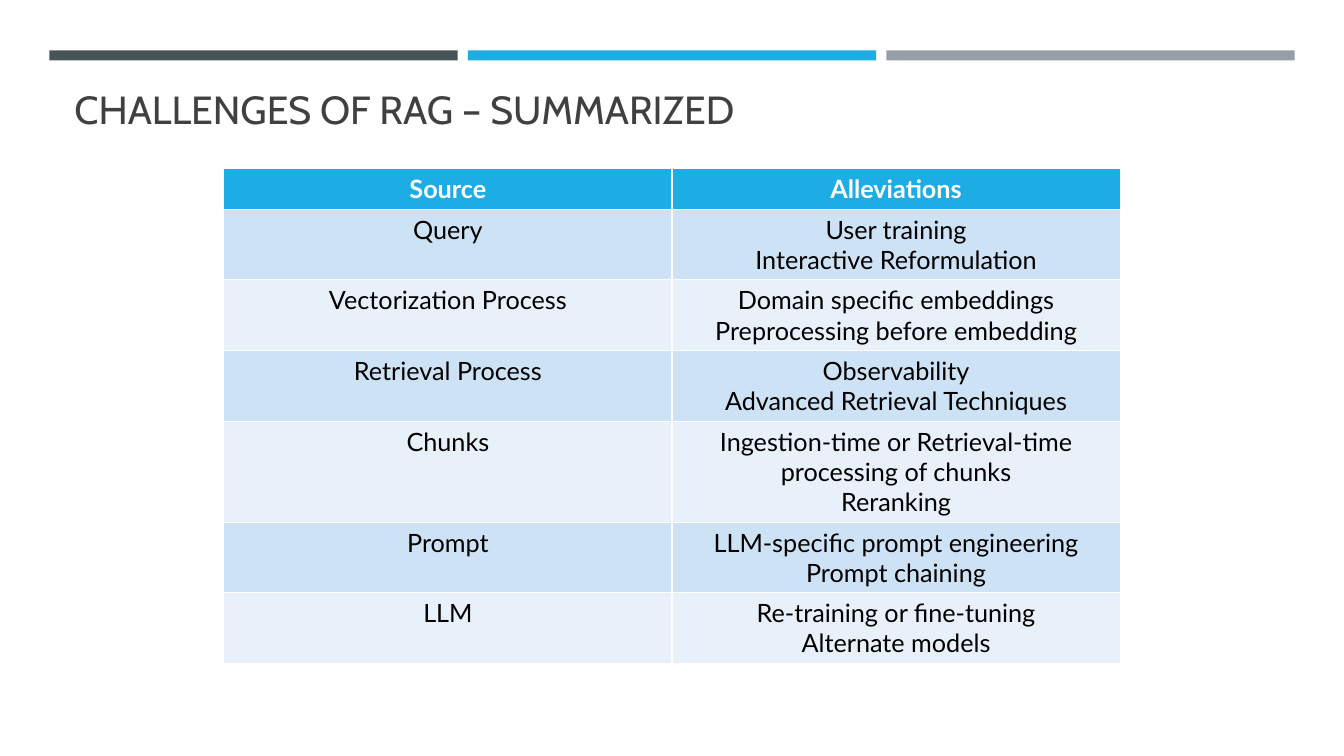
from pptx import Presentation
from pptx.dml.color import RGBColor
from pptx.enum.shapes import MSO_SHAPE as Shape
from pptx.enum.text import MSO_ANCHOR as Anchor, PP_ALIGN as Align
from pptx.util import Inches, Pt

SLATE = RGBColor(0x46, 0x53, 0x59)
BLUE = RGBColor(0x1C, 0xAD, 0xE4)
GRAY = RGBColor(0x96, 0x9F, 0xA7)
CHARCOAL = RGBColor(0x40, 0x40, 0x40)
BLACK = RGBColor(0, 0, 0)
WHITE = RGBColor(0xFF, 0xFF, 0xFF)
BANDS = (RGBColor(0xCD, 0xE3, 0xF5), RGBColor(0xE8, 0xF1, 0xFA))

HEADINGS = ("Source", "Alleviations")
# Source, its alleviations, and the number of lines they fill
CHALLENGES = [
    ("Query", "User training\nInteractive Reformulation", 2),
    ("Vectorization Process",
     "Domain specific embeddings\nPreprocessing before embedding", 2),
    ("Retrieval Process", "Observability\nAdvanced Retrieval Techniques", 2),
    ("Chunks",
     "Ingestion-time or Retrieval-time processing of chunks\nReranking", 3),
    ("Prompt", "LLM-specific prompt engineering\nPrompt chaining", 2),
    ("LLM", "Re-training or fine-tuning\nAlternate models", 2),
]


def add_top_bars(slide, left, top, width, height, gap=0.1):
    colors = (SLATE, BLUE, GRAY)
    bar_width = (width - gap * (len(colors) - 1)) / len(colors)
    for index, color in enumerate(colors):
        bar = slide.shapes.add_shape(
            Shape.RECTANGLE, Inches(left + index * (bar_width + gap)),
            Inches(top), Inches(bar_width), Inches(height))
        bar.shadow.inherit = False
        bar.fill.solid()
        bar.fill.fore_color.rgb = color
        bar.line.fill.background()


def add_title(slide, left, top, width, height):
    title = slide.shapes.add_textbox(
        Inches(left), Inches(top), Inches(width), Inches(height)).text_frame
    title.word_wrap = True
    title.vertical_anchor = Anchor.BOTTOM
    heading = title.paragraphs[0]
    heading.text = "CHALLENGES OF RAG – SUMMARIZED"
    heading.font.name = "Cabin"
    heading.font.size = Pt(28)
    heading.font.color.rgb = CHARCOAL


def fill_cell(cell, text, fill, color, bold):
    cell.text = text
    cell.fill.solid()
    cell.fill.fore_color.rgb = fill
    for line in cell.text_frame.paragraphs:
        line.alignment = Align.CENTER
        line.font.name = "Lato"
        line.font.size = Pt(18)
        line.font.bold = bold
        line.font.color.rgb = color


def add_challenge_table(slide, left, top, width, height):
    """Draw the table; each row is as tall as its lines of text need."""
    line_counts = [1] + [lines for _, _, lines in CHALLENGES]
    padding = 0.11
    line_height = (height - padding * len(line_counts)) / sum(line_counts)
    table = slide.shapes.add_table(
        len(line_counts), len(HEADINGS), Inches(left), Inches(top),
        Inches(width), Inches(height)).table
    for row, lines in zip(table.rows, line_counts):
        row.height = Inches(padding + lines * line_height)

    for column, heading in enumerate(HEADINGS):
        fill_cell(table.cell(0, column), heading, BLUE, WHITE, True)
    for row, (source, alleviations, _) in enumerate(CHALLENGES, start=1):
        band = BANDS[(row - 1) % 2]
        for column, text in enumerate((source, alleviations)):
            fill_cell(table.cell(row, column), text, band, BLACK, False)


def main():
    deck = Presentation()
    deck.slide_width = Inches(13.33)
    deck.slide_height = Inches(7.5)
    slide = deck.slides.add_slide(deck.slide_layouts[6])
    add_top_bars(slide, 0.49, 0.5, 12.35, 0.1)
    add_title(slide, 0.64, 0.77, 12.06, 0.59)
    add_challenge_table(slide, 2.22, 1.67, 8.89, 4.91)
    deck.save("out.pptx")


if __name__ == "__main__":
    main()
